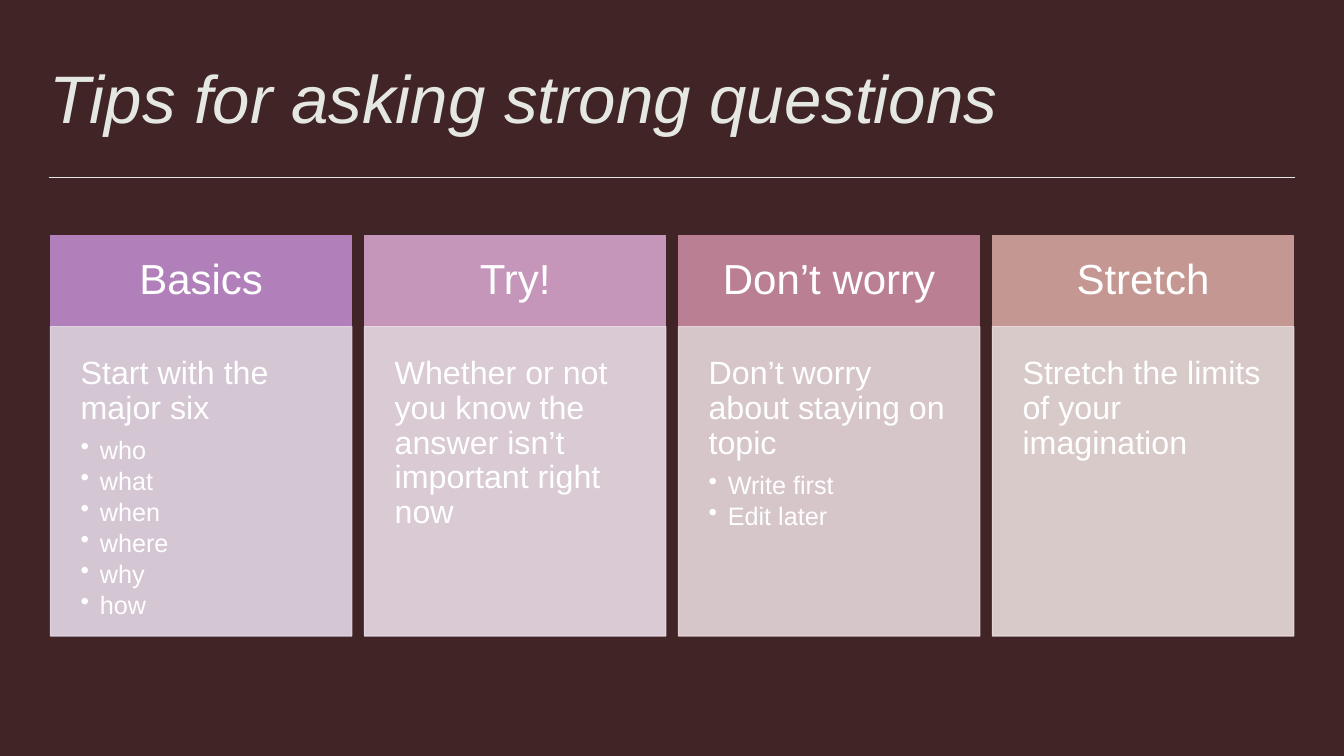
"""Build the slide of four cards with tips for asking strong questions."""
from dataclasses import dataclass

from lxml.etree import SubElement
from pptx import Presentation
from pptx.dml.color import RGBColor as Rgb
from pptx.enum.shapes import MSO_CONNECTOR as Connector, MSO_SHAPE as Shape
from pptx.enum.text import MSO_ANCHOR as Anchor, MSO_AUTO_SIZE as AutoSize, PP_ALIGN as Align
from pptx.oxml.ns import qn
from pptx.util import Inches, Pt

TITLE = "Tips for asking strong questions"
CARDS = [
    ("Basics", "B17FBA", "E4D8E7", "Start with the major six",
     ["who", "what", "when", "where", "why", "how"]),
    ("Try!", "C696BA", "EADDE7",
     "Whether or not you know the answer isn’t important right now", []),
    ("Don’t worry", "BA7F92", "E7D8DC", "Don’t worry about staying on topic",
     ["Write first", "Edit later"]),
    ("Stretch", "C49792", "EADDDC", "Stretch the limits of your imagination", []),
]


@dataclass(frozen=True)
class Theme:
    font: str = "Arial"
    background: str = "412425"
    heading: str = "E5E8E2"
    text: str = "FFFFFF"
    title_size: int = 48
    header_size: int = 30
    lead_size: int = 23
    bullet_size: int = 18
    line_spacing: float = 0.9
    panel_opacity: int = 90


THEME = Theme()
WIDTH, HEIGHT = 13.33, 7.5
LEFT, CARD_WIDTH, CARD_STEP = 0.5, 2.99, 3.114
HEADER_TOP, HEADER_HEIGHT, PANEL_HEIGHT = 2.34, 0.9, 3.07
RULE_LEFT, RULE_RIGHT, RULE_TOP = 0.49, 12.84, 1.76
BULLET_INDENT = 0.19


def apply(target, values):
    for name, value in values.items():
        setattr(target, name, value)


def format_frame(frame, inset, anchor):
    sides = ("margin_left", "margin_top", "margin_right", "margin_bottom")
    apply(frame, {side: Inches(inset) for side in sides})
    apply(frame, {"word_wrap": True, "auto_size": AutoSize.NONE, "vertical_anchor": anchor})


def write(para, text, size, color=THEME.text, align=Align.LEFT, italic=False, after=0):
    apply(para, {"alignment": align, "line_spacing": THEME.line_spacing})
    spacing = SubElement(para._p.get_or_add_pPr(), qn("a:spcAft"))
    SubElement(spacing, qn("a:spcPct"), val=str(after * 1000))
    span = para.add_run()
    span.text = text
    apply(span.font, {"name": THEME.font, "size": Pt(size), "italic": italic})
    span.font.color.rgb = Rgb.from_string(color)


def add_bullet(para):
    props = para._p.get_or_add_pPr()
    props.set("marL", str(Inches(BULLET_INDENT)))
    props.set("indent", str(-Inches(BULLET_INDENT)))
    SubElement(props, qn("a:buChar"), char="•")


def add_block(page, left, top, height, color, opacity=100):
    block = page.shapes.add_shape(
        Shape.RECTANGLE, *map(Inches, (left, top, CARD_WIDTH, height)))
    block.shadow.inherit = False
    block.fill.solid()
    block.line.width = Pt(0.75)
    for paint in (block.fill.fore_color, block.line.color):
        paint.rgb = Rgb.from_string(color)
    if opacity < 100:
        for paint in block._element.spPr.iter(qn("a:srgbClr")):
            SubElement(paint, qn("a:alpha"), val=str(opacity * 1000))
    return block.text_frame


def add_card(page, left, card):
    header, header_color, panel_color, lead, bullets = card
    frame = add_block(page, left, HEADER_TOP, HEADER_HEIGHT, header_color)
    format_frame(frame, 0.24, Anchor.MIDDLE)
    write(frame.paragraphs[0], header, THEME.header_size, align=Align.CENTER, after=35)

    frame = add_block(page, left, HEADER_TOP + HEADER_HEIGHT, PANEL_HEIGHT,
                      panel_color, THEME.panel_opacity)
    format_frame(frame, 0.3, Anchor.TOP)
    write(frame.paragraphs[0], lead, THEME.lead_size, after=35)
    for bullet in bullets:
        para = frame.add_paragraph()
        para.level = 1
        write(para, bullet, THEME.bullet_size, after=15)
        add_bullet(para)


def add_title(page):
    title = page.shapes.title
    apply(title, {"left": Inches(RULE_LEFT), "top": Inches(0.43),
                  "width": Inches(12.36), "height": Inches(0.94)})
    format_frame(title.text_frame, 0, Anchor.BOTTOM)
    write(title.text_frame.paragraphs[0], TITLE, THEME.title_size, THEME.heading, italic=True)


def add_rule(page):
    rule = page.shapes.add_connector(
        Connector.STRAIGHT, *map(Inches, (RULE_LEFT, RULE_TOP, RULE_RIGHT, RULE_TOP)))
    rule.line.color.rgb = Rgb.from_string(THEME.heading)
    rule.line.width = Pt(0.5)
    SubElement(rule._element.spPr, qn("a:effectLst"))


def main():
    deck = Presentation()
    apply(deck, {"slide_width": Inches(WIDTH), "slide_height": Inches(HEIGHT)})
    page = deck.slides.add_slide(deck.slide_layouts.get_by_name("Title Only"))
    page.background.fill.solid()
    page.background.fill.fore_color.rgb = Rgb.from_string(THEME.background)
    add_title(page)
    add_rule(page)
    for column, card in enumerate(CARDS):
        add_card(page, LEFT + column * CARD_STEP, card)
    deck.save("out.pptx")


if __name__ == "__main__":
    main()
